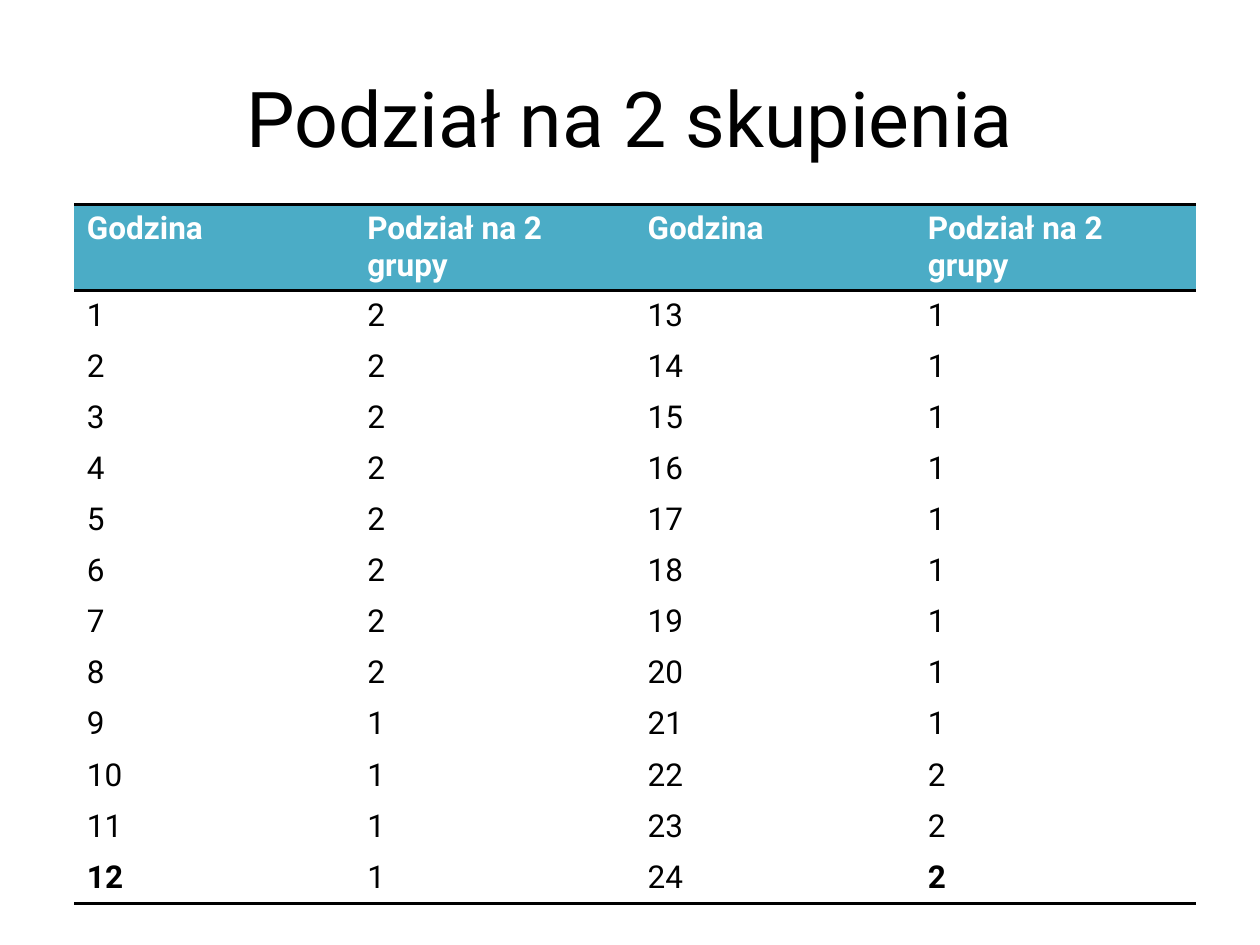
"""Build a slide with a table of hours split into two clusters."""
from dataclasses import dataclass

from lxml import etree
from pptx import Presentation
from pptx.dml.color import RGBColor
from pptx.enum.text import MSO_ANCHOR, PP_ALIGN
from pptx.oxml.ns import qn
from pptx.util import Inches, Pt

MIDDLE = MSO_ANCHOR.MIDDLE
LEFT, CENTER = PP_ALIGN.LEFT, PP_ALIGN.CENTER
BLACK = RGBColor(0x00, 0x00, 0x00)
WHITE = RGBColor(0xFF, 0xFF, 0xFF)
TEAL = RGBColor(0x4B, 0xAC, 0xC6)
FONT = "Roboto"
PLAIN = "{2D5ABB26-0587-4C30-8999-92F81FD0307C}"
WIDE, HIGH = Inches(10), Inches(7.5)
ROW = Pt(29.2)
HEAD = ("Godzina", "Podział na 2 grupy")
GROUPS = [2] * 8 + [1] * 13 + [2] * 3
HALF = len(GROUPS) // 2


@dataclass
class Entry:
    text: str
    fill: RGBColor = WHITE
    color: RGBColor = BLACK
    bold: bool = False
    rules: tuple[str, ...] = ()


def write(frame, text: str, size: float = 18, color: RGBColor = BLACK,
          bold: bool = False, align: int = LEFT) -> None:
    para = frame.paragraphs[0]
    para.alignment = align
    run = para.add_run()
    run.text = text
    font = run.font
    font.name, font.size, font.bold = FONT, Pt(size), bold
    font.color.rgb = color


def rule(cell, side: str) -> None:
    props = cell._tc.get_or_add_tcPr()
    line = etree.SubElement(props, qn(f"a:{side}"), w=str(Pt(2)))
    fill = etree.SubElement(line, qn("a:solidFill"))
    etree.SubElement(fill, qn("a:srgbClr"), val=str(BLACK))


def draw(cell, entry: Entry) -> None:
    for side in entry.rules:
        rule(cell, side)
    cell.fill.solid()
    cell.fill.fore_color.rgb = entry.fill
    write(cell.text_frame, entry.text, color=entry.color, bold=entry.bold)


def entries() -> list[list[Entry]]:
    grid = [[Entry(text, TEAL, WHITE, True, ("lnT", "lnB")) for text in HEAD * 2]]
    for hour in range(1, HALF + 1):
        pairs = [(n, GROUPS[n - 1]) for n in (hour, hour + HALF)]
        grid.append([Entry(str(value)) for pair in pairs for value in pair])
    for entry in grid[-1]:
        entry.rules = ("lnB",)
    grid[-1][0].bold = grid[-1][-1].bold = True
    return grid


def add_grid(slide, grid: list[list[Entry]]) -> None:
    rows, cols = len(grid), len(grid[0])
    frame = slide.shapes.add_table(rows, cols, Inches(0.59), Inches(1.62),
                                   int(WIDE * 0.89), ROW * rows)
    table = frame.table
    table.first_row = table.horz_banding = False
    table._tbl.tblPr.find(qn("a:tableStyleId")).text = PLAIN
    for row, line in zip(table.rows, grid):
        row.height = ROW
        for cell, entry in zip(row.cells, line):
            draw(cell, entry)


def add_title(slide, text: str) -> None:
    title = slide.shapes.title
    title.left, title.top = int(WIDE * 0.05), int(HIGH * 0.04)
    title.width, title.height = int(WIDE * 0.9), Inches(1.25)
    title.text_frame.vertical_anchor = MIDDLE
    write(title.text_frame, text, size=44, align=CENTER)


def main() -> None:
    deck = Presentation()
    deck.slide_width, deck.slide_height = WIDE, HIGH
    slide = deck.slides.add_slide(deck.slide_layouts[5])
    add_title(slide, "Podział na 2 skupienia")
    add_grid(slide, entries())
    deck.save("out.pptx")


if __name__ == "__main__":
    main()
